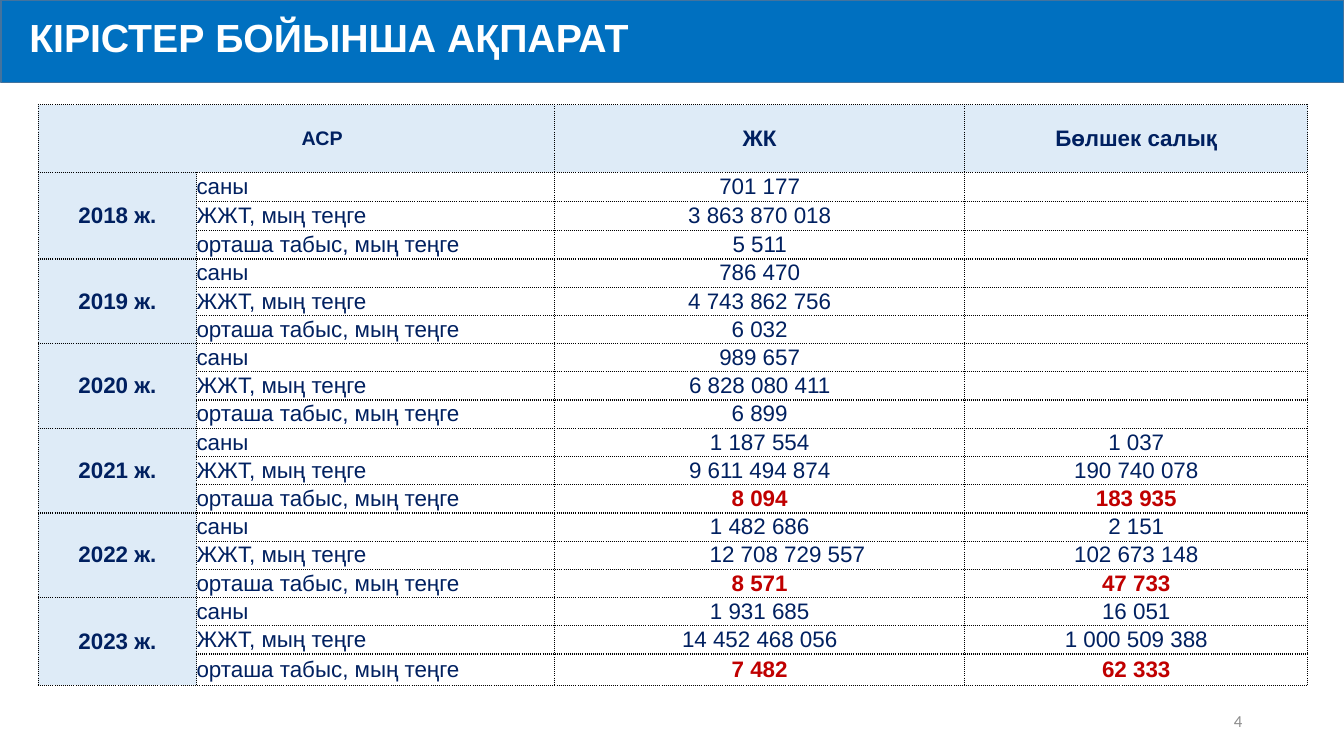
from dataclasses import dataclass

import lxml.etree
import pptx
import pptx.dml.color
import pptx.enum.shapes
import pptx.enum.text
import pptx.oxml.ns
import pptx.util

Inches = pptx.util.Inches
Pt = pptx.util.Pt
ALIGN = pptx.enum.text.PP_ALIGN
MIDDLE = pptx.enum.text.MSO_ANCHOR.MIDDLE
qn = pptx.oxml.ns.qn

COLOURS = {
    "banner": "0070C0",
    "banner_edge": "43739E",
    "title": "FFFFFF",
    "heading_fill": "DEEBF7",
    "body_fill": "FFFFFF",
    "ink": "002060",
    "accent": "C00000",
    "grid": "000000",
    "page_number": "8C8C8C",
}
INDICATORS = ("саны", "ЖЖТ, мың теңге", "орташа табыс, мың теңге")
COLUMN_WIDTHS = (1.57, 3.55, 4.07, 3.4)
ROW_HEIGHTS = (0.67, 0.29, 0.29, *[0.28] * 15, 0.31)


@dataclass(frozen=True)
class YearIncome:
    year: str
    entrepreneurs: tuple[str, str, str]
    retail_tax: tuple[str, str, str] = ("", "", "")


@dataclass(frozen=True)
class CellStyle:
    fill: str = "body_fill"
    colour: str = "ink"
    size: int = 16
    bold: bool = False
    align: ALIGN = ALIGN.CENTER
    left_margin: float = 0


YEARS = (
    YearIncome("2018 ж.", ("701 177", "3 863 870 018", "5 511")),
    YearIncome("2019 ж.", ("786 470", "4 743 862 756", "6 032")),
    YearIncome("2020 ж.", ("989 657", "6 828 080 411", "6 899")),
    YearIncome("2021 ж.", ("1 187 554", "9 611 494 874", "8 094"),
               ("1 037", "190 740 078", "183 935")),
    YearIncome("2022 ж.", ("1 482 686", "12 708 729 557", "8 571"),
               ("2 151", "102 673 148", "47 733")),
    YearIncome("2023 ж.", ("1 931 685", "14 452 468 056", "7 482"),
               ("16 051", "1 000 509 388", "62 333")),
)

HEADING = CellStyle(fill="heading_fill", bold=True)
GROUP_HEADING = CellStyle(fill="heading_fill", bold=True, size=14, left_margin=0.51)
INDICATOR = CellStyle(align=ALIGN.LEFT)
VALUE = CellStyle()
SHIFTED_VALUE = CellStyle(left_margin=0.55)
HIGHLIGHT = CellStyle(colour="accent", bold=True)


def rgb(name: str) -> pptx.dml.color.RGBColor:
    return pptx.dml.color.RGBColor.from_string(COLOURS[name])


def write(frame, text: str, size: int, colour: str, align: ALIGN,
          bold: bool = False, face: str = "Arial") -> None:
    frame.text = text
    frame.vertical_anchor = MIDDLE
    paragraph = frame.paragraphs[0]
    paragraph.alignment = align
    for run in paragraph.runs:
        run.font.name = face
        run.font.size = Pt(size)
        run.font.bold = bold
        run.font.color.rgb = rgb(colour)


def dot_borders(cell) -> None:
    properties = cell._tc.get_or_add_tcPr()
    for side in ("a:lnL", "a:lnR", "a:lnT", "a:lnB"):
        border = lxml.etree.SubElement(properties, qn(side), w=str(Pt(1)))
        fill = lxml.etree.SubElement(border, qn("a:solidFill"))
        lxml.etree.SubElement(fill, qn("a:srgbClr"), val=COLOURS["grid"])
        lxml.etree.SubElement(border, qn("a:prstDash"), val="sysDot")


def fill_cell(cell, text: str, style: CellStyle) -> None:
    cell.margin_left = Inches(style.left_margin)
    cell.margin_right = cell.margin_top = cell.margin_bottom = 0
    cell.vertical_anchor = MIDDLE
    dot_borders(cell)
    cell.fill.solid()
    cell.fill.fore_color.rgb = rgb(style.fill)
    if text:
        write(cell.text_frame, text, style.size, style.colour, style.align, style.bold)
    else:
        paragraph = cell._tc.find(".//" + qn("a:p"))
        lxml.etree.SubElement(paragraph, qn("a:endParaRPr"), sz=str(style.size * 100))


def value_style(income: YearIncome, indicator: int, text: str) -> CellStyle:
    if indicator == 2 and income.retail_tax[indicator]:
        return HIGHLIGHT
    return SHIFTED_VALUE if text == "12 708 729 557" else VALUE


def add_title(slide) -> None:
    title = slide.shapes.title
    title.left, title.top = Inches(0), Inches(0.08)
    title.width, title.height = Inches(13.32), Inches(0.62)
    write(title.text_frame, "КІРІСТЕР БОЙЫНША АҚПАРАТ", 28, "title", ALIGN.LEFT, True)
    title.text_frame.margin_left = Inches(0.29)
    title.text_frame.paragraphs[0].line_spacing = 0.9

    banner = slide.shapes.add_shape(
        pptx.enum.shapes.MSO_SHAPE.RECTANGLE,
        Inches(0.01), Inches(0), Inches(13.32), Inches(0.82))
    banner.shadow.inherit = False
    banner.fill.solid()
    banner.fill.fore_color.rgb = rgb("banner")
    banner.line.color.rgb = rgb("banner_edge")
    banner.line.width = Pt(1)
    title.element.addprevious(banner.element)


def add_income_table(slide) -> None:
    table = slide.shapes.add_table(
        len(ROW_HEIGHTS), len(COLUMN_WIDTHS), Inches(0.38), Inches(1.04),
        Inches(sum(COLUMN_WIDTHS)), Inches(sum(ROW_HEIGHTS))).table
    table.first_row = table.horz_banding = False
    for column, width in zip(table.columns, COLUMN_WIDTHS):
        column.width = Inches(width)
    for row, height in zip(table.rows, ROW_HEIGHTS):
        row.height = Inches(height)

    headings = ("АСР", "", "ЖК", "Бөлшек салық")
    for column, heading in enumerate(headings):
        fill_cell(table.cell(0, column), heading, HEADING if column else GROUP_HEADING)
    table.cell(0, 0).merge(table.cell(0, 1))

    for block, income in enumerate(YEARS):
        first = 1 + block * len(INDICATORS)
        for indicator, label in enumerate(INDICATORS):
            row = first + indicator
            fill_cell(table.cell(row, 0), "" if indicator else income.year, HEADING)
            fill_cell(table.cell(row, 1), label, INDICATOR)
            for column, values in enumerate((income.entrepreneurs, income.retail_tax), 2):
                text = values[indicator]
                fill_cell(table.cell(row, column), text,
                          value_style(income, indicator, text))
        table.cell(first, 0).merge(table.cell(first + len(INDICATORS) - 1, 0))


def add_page_number(slide) -> None:
    frame = slide.shapes.add_textbox(
        Inches(9.42), Inches(6.95), Inches(3), Inches(0.4)).text_frame
    frame.word_wrap = True
    write(frame, "4", 12, "page_number", ALIGN.RIGHT, face="Calibri")


def main() -> None:
    deck = pptx.Presentation()
    deck.slide_width, deck.slide_height = Inches(13.33), Inches(7.5)
    slide = deck.slides.add_slide(deck.slide_layouts[5])
    add_title(slide)
    add_income_table(slide)
    add_page_number(slide)
    deck.save("out.pptx")


if __name__ == "__main__":
    main()
